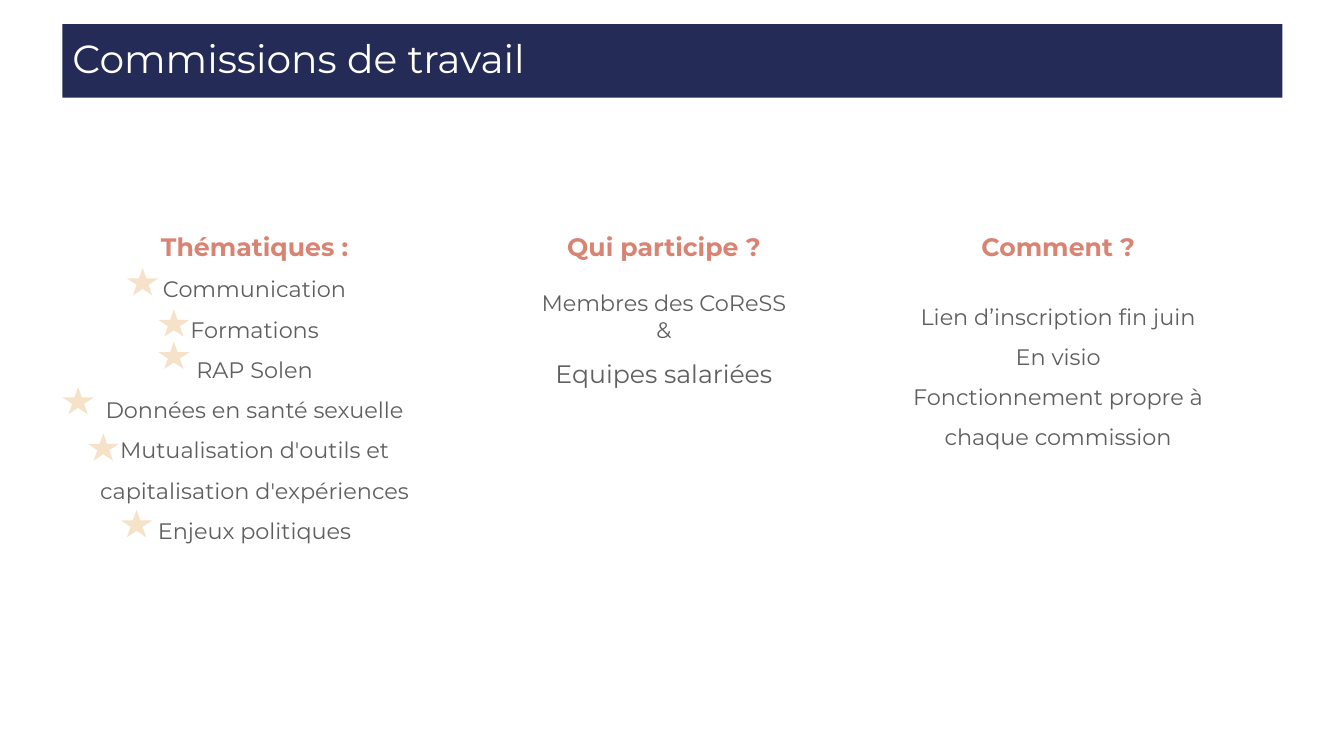
from pptx import Presentation
from pptx.dml.color import RGBColor as RGB
from pptx.enum.shapes import MSO_SHAPE as SHAPE
from pptx.enum.text import MSO_ANCHOR as ANCHOR, MSO_AUTO_SIZE as AUTO_SIZE, PP_ALIGN as ALIGN
from pptx.util import Pt

PX = 9144  # EMU per px, 100 px to the inch

THEME = {
    "font": "Montserrat",
    "navy": RGB.from_string("232B56"),
    "white": RGB.from_string("FFFFFF"),
    "coral": RGB.from_string("D98373"),
    "grey": RGB.from_string("5F5F5F"),
    "sand": RGB.from_string("F5E2C8"),
    "title": Pt(28),
    "heading": Pt(18),
    "body": Pt(16),
}


def add_filled(kind, left, top, width, height, color):
    shape = slide.shapes.add_shape(kind, left * PX, top * PX, width * PX, height * PX)
    shape.shadow.inherit = False
    shape.fill.solid()
    shape.fill.fore_color.rgb = THEME[color]
    shape.line.fill.background()
    return shape


def write(paragraph, text, size, color, bold=False, **spacing):
    paragraph.text = text
    for name, value in spacing.items():
        setattr(paragraph, name, value)
    font_format = {"name": THEME["font"], "size": THEME[size], "bold": bold}
    for name, value in font_format.items():
        setattr(paragraph.font, name, value)
    paragraph.font.color.rgb = THEME[color]


presentation = Presentation()
presentation.slide_width = 1333 * PX
presentation.slide_height = 750 * PX
slide = presentation.slides.add_slide(presentation.slide_layouts[6])

# Title band
band = add_filled(SHAPE.RECTANGLE, 62, 24, 1210, 73, "navy")
band.text_frame.word_wrap = True
band.text_frame.vertical_anchor = ANCHOR.MIDDLE
write(band.text_frame.paragraphs[0], "Commissions de travail", "title", "white",
      alignment=ALIGN.LEFT, line_spacing=0.9)

# Columns: left, height, heading, gap under heading, lines of (text, size, line spacing)
COLUMNS = [
    (62, 379, "Thématiques :", 0, [
        ("Communication", "body", 1.5),
        ("Formations", "body", 1.5),
        ("RAP Solen", "body", 1.5),
        ("Données en santé sexuelle", "body", 1.5),
        ("Mutualisation d'outils et capitalisation d'expériences", "body", 1.5),
        ("Enjeux politiques", "body", 1.5),
    ]),
    (468, 177, "Qui participe ?", 19.5, [
        ("Membres des CoReSS", "body", 1.0),
        ("&", "body", 1.0),
        ("Equipes salariées", "heading", 1.5),
    ]),
    (859, 239, "Comment ?", 19.5, [
        ("Lien d’inscription fin juin", "body", 1.5),
        ("En visio", "body", 1.5),
        ("Fonctionnement propre à chaque commission", "body", 1.5),
    ]),
]
for left, height, heading, gap, lines in COLUMNS:
    box = slide.shapes.add_textbox(left * PX, 210 * PX, 381 * PX, height * PX)
    frame = box.text_frame
    frame.word_wrap = True
    frame.auto_size = AUTO_SIZE.SHAPE_TO_FIT_TEXT
    write(frame.paragraphs[0], heading, "heading", "coral", bold=True,
          alignment=ALIGN.CENTER, line_spacing=1.5)
    for index, (text, size, line_spacing) in enumerate(lines):
        write(frame.add_paragraph(), text, size, "grey", alignment=ALIGN.CENTER,
              line_spacing=line_spacing, space_before=Pt(0 if index else gap))

# Stars beside the themes
STARS = [(126, 266), (157, 307), (157, 339), (62, 384), (87, 430), (120, 506)]
for left, top in STARS:
    add_filled(SHAPE.STAR_5_POINT, left, top, 31, 27, "sand")

presentation.save("out.pptx")
